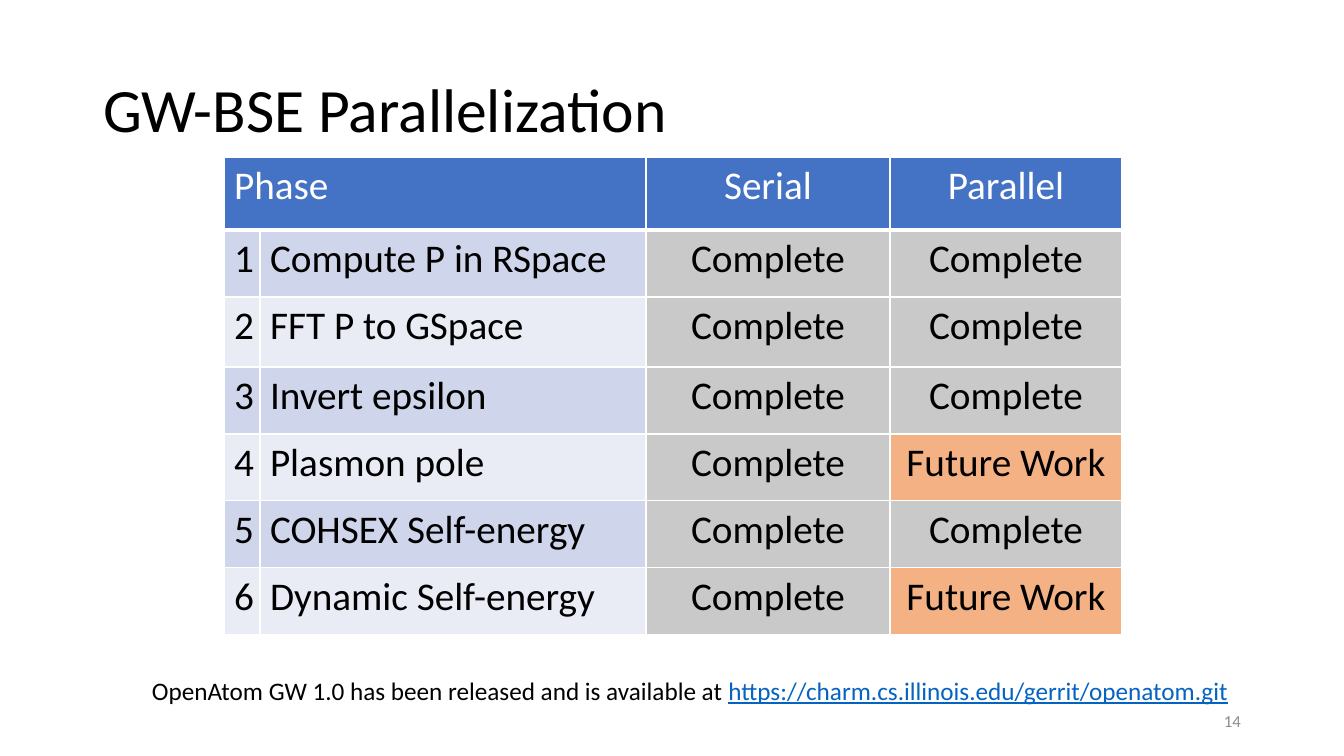
"""Build the GW-BSE parallelization status slide."""
from dataclasses import dataclass

from lxml.etree import SubElement
from pptx import Presentation
from pptx.dml.color import RGBColor
from pptx.enum.text import MSO_ANCHOR, MSO_AUTO_SIZE, PP_ALIGN
from pptx.oxml.ns import qn
from pptx.slide import Slide
from pptx.table import _Cell
from pptx.text.text import TextFrame, _Paragraph
from pptx.util import Emu, Pt

COLORS = {
    "black": "000000",
    "white": "FFFFFF",
    "header": "4472C4",
    "odd": "CFD5EA",
    "even": "E9EBF5",
    "complete": "C9C9C9",
    "future": "F4B183",
    "link": "0563C1",
    "number": "8C8C8C",
}
FONT = "Calibri"
EMU_PER_PX = 914400 / 100.8
COLUMN_WIDTHS = (36, 386, 244, 232)
ROW_HEIGHTS = (73, 67, 70, 67, 67, 67, 67)


@dataclass(frozen=True)
class Phase:
    name: str
    parallel: str = "Complete"
    serial: str = "Complete"


@dataclass(frozen=True)
class Span:
    text: str
    color: str = "black"
    underline: bool = False


@dataclass(frozen=True)
class Caption:
    box: tuple[int, int, int, int]
    spans: tuple[Span, ...]
    size: int
    align: PP_ALIGN
    anchor: MSO_ANCHOR


PHASES = (
    Phase("Compute P in RSpace"),
    Phase("FFT P to GSpace"),
    Phase("Invert epsilon"),
    Phase("Plasmon pole", "Future Work"),
    Phase("COHSEX Self-energy"),
    Phase("Dynamic Self-energy", "Future Work"),
)
CAPTIONS = (
    Caption((949, 701, 302, 40), (Span("14", "number"),), 12,
            PP_ALIGN.RIGHT, MSO_ANCHOR.MIDDLE),
    Caption((142, 670, 1109, 40), (
        Span("OpenAtom GW 1.0 has been released and is available at "),
        Span("https://charm.cs.illinois.edu/gerrit/openatom.git", "link", True),
    ), 18, PP_ALIGN.LEFT, MSO_ANCHOR.TOP),
)


def px(length: int) -> Emu:
    return Emu(round(length * EMU_PER_PX))


def rgb(name: str) -> RGBColor:
    return RGBColor.from_string(COLORS[name])


def add_span(para: _Paragraph, span: Span, size: int) -> None:
    run = para.add_run()
    run.text = span.text
    run.font.name = FONT
    run.font.size = Pt(size)
    run.font.bold = False
    run.font.color.rgb = rgb(span.color)
    if span.underline:
        run.font.underline = True


def set_frame(frame: TextFrame, anchor: MSO_ANCHOR) -> _Paragraph:
    frame.word_wrap = True
    frame.auto_size = MSO_AUTO_SIZE.NONE
    frame.vertical_anchor = anchor
    return frame.paragraphs[0]


def add_title(page: Slide, text: str) -> None:
    title = page.shapes.title
    title.left, title.top, title.width, title.height = map(px, (93, 40, 1159, 146))
    para = set_frame(title.text_frame, MSO_ANCHOR.MIDDLE)
    para.alignment = PP_ALIGN.LEFT
    para.line_spacing = 0.9
    add_span(para, Span(text), 44)


def add_caption(page: Slide, caption: Caption) -> None:
    box = page.shapes.add_textbox(*map(px, caption.box))
    para = set_frame(box.text_frame, caption.anchor)
    para.alignment = caption.align
    for span in caption.spans:
        add_span(para, span, caption.size)


def add_borders(cell: _Cell, row: int) -> None:
    properties = cell._tc.get_or_add_tcPr()
    widths = {"L": 1, "R": 1, "T": 3 if row == 1 else 1, "B": 3 if row == 0 else 1}
    for side, width in widths.items():
        line = SubElement(properties, qn(f"a:ln{side}"), w=str(Pt(width)))
        fill = SubElement(line, qn("a:solidFill"))
        SubElement(fill, qn("a:srgbClr"), val=COLORS["white"])


def fill_cell(cell: _Cell, row: int, column: int, text: str) -> None:
    add_borders(cell, row)
    if row == 0:
        fill = "header"
    elif column < 2:
        fill = "odd" if row % 2 else "even"
    else:
        fill = "complete" if text == "Complete" else "future"
    cell.fill.solid()
    cell.fill.fore_color.rgb = rgb(fill)
    para = cell.text_frame.paragraphs[0]
    para.alignment = PP_ALIGN.LEFT if column < 2 else PP_ALIGN.CENTER
    if text:
        add_span(para, Span(text, "black" if row else "white"), 28)


def add_phase_table(page: Slide) -> None:
    rows = [("Phase", "", "Serial", "Parallel")]
    rows += [(str(number), phase.name, phase.serial, phase.parallel)
             for number, phase in enumerate(PHASES, 1)]
    table = page.shapes.add_table(
        len(rows), len(COLUMN_WIDTHS), px(224), px(157),
        px(sum(COLUMN_WIDTHS)), px(sum(ROW_HEIGHTS))).table
    table.first_row = table.horz_banding = False
    for column, width in zip(table.columns, COLUMN_WIDTHS):
        column.width = px(width)
    for row, height in zip(table.rows, ROW_HEIGHTS):
        row.height = px(height)
    table.cell(0, 0).merge(table.cell(0, 1))
    for row, texts in enumerate(rows):
        for column, text in enumerate(texts):
            fill_cell(table.cell(row, column), row, column, text)


def main() -> None:
    deck = Presentation()
    deck.slide_width, deck.slide_height = px(1344), px(756)
    page = deck.slides.add_slide(deck.slide_layouts.get_by_name("Title Only"))
    add_title(page, "GW-BSE Parallelization")
    add_phase_table(page)
    for caption in CAPTIONS:
        add_caption(page, caption)
    deck.save("out.pptx")


if __name__ == "__main__":
    main()
